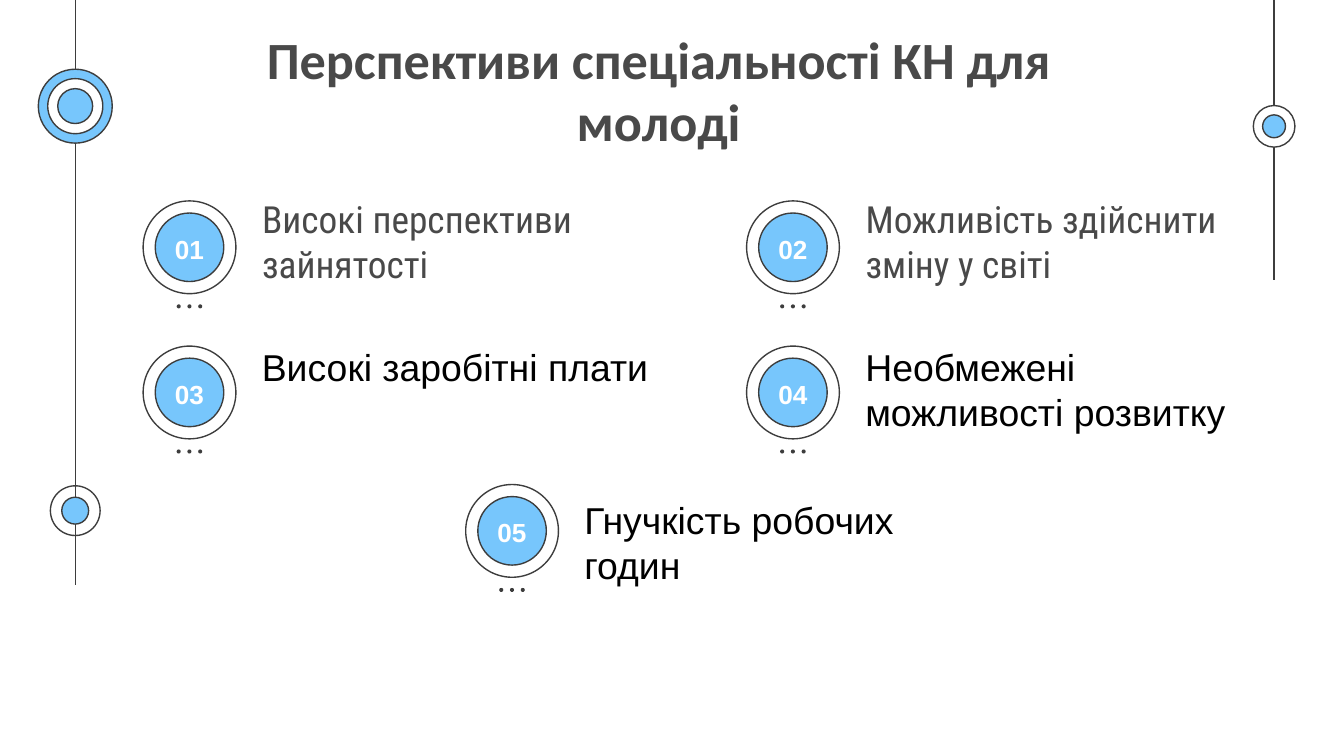
from dataclasses import dataclass
from typing import Optional

from lxml import etree
from pptx import Presentation
from pptx.dml.color import RGBColor
from pptx.enum.shapes import MSO_CONNECTOR, MSO_SHAPE
from pptx.enum.text import MSO_ANCHOR, MSO_AUTO_SIZE, PP_ALIGN
from pptx.oxml.ns import qn
from pptx.util import Inches, Pt

STRAIGHT = MSO_CONNECTOR.STRAIGHT
OVAL = MSO_SHAPE.OVAL
TOP, MIDDLE = MSO_ANCHOR.TOP, MSO_ANCHOR.MIDDLE
LEFT, CENTER = PP_ALIGN.LEFT, PP_ALIGN.CENTER
FIXED = MSO_AUTO_SIZE.NONE

WIDTH = 10
HEIGHT = WIDTH * 9 / 16
TWO_CONTENT = 3

INK = RGBColor(0x3D, 0x3D, 0x3D)
GREY = RGBColor(0x49, 0x49, 0x49)
BLUE = RGBColor(0x77, 0xC6, 0xFC)
WHITE = RGBColor(0xFF, 0xFF, 0xFF)
BLACK = RGBColor(0, 0, 0)

# Grid of badge centres
COLS = {"left": 1.41, "middle": 3.81, "right": 5.9}
ROWS = (1.84, 2.92, 3.95)
TEXT_GAP = 0.44  # from badge centre to the text frame
DOT_STEP = 0.08


@dataclass
class Item:
    text: str
    col: str
    row: int
    top: float
    width: float
    height: float
    placeholder: Optional[int] = None


@dataclass
class Ring:
    x: float
    y: float
    size: float
    fill: Optional[RGBColor]


ITEMS = (
    Item("Високі перспективи зайнятості", "left", 0, 1.36, 3.03, 0.99, 1),
    Item("Можливість здійснити зміну у світі", "right", 0, 1.36, 2.91, 1.12, 2),
    Item("Високі заробітні плати", "left", 1, 2.51, 3.66, 0.77),
    Item("Необмежені можливості розвитку", "right", 1, 2.51, 3.17, 1.11),
    Item("Гнучкість робочих годин", "middle", 2, 3.65, 3, 1.11),
)

LEFT_RAIL, RIGHT_RAIL = 0.56, 9.48
RAILS = ((LEFT_RAIL, 4.35), (RIGHT_RAIL, 2.08))
RINGS = (
    Ring(LEFT_RAIL, 3.8, 0.37, None),
    Ring(LEFT_RAIL, 3.8, 0.2, BLUE),
    Ring(RIGHT_RAIL, 0.94, 0.31, WHITE),
    Ring(RIGHT_RAIL, 0.94, 0.17, BLUE),
    Ring(LEFT_RAIL, 0.79, 0.55, BLUE),
    Ring(LEFT_RAIL, 0.79, 0.41, WHITE),
    Ring(LEFT_RAIL, 0.79, 0.26, BLUE),
)


def place(sp, left: float, top: float, width: float, height: float) -> None:
    sp.left, sp.top = Inches(left), Inches(top)
    sp.width, sp.height = Inches(width), Inches(height)


def add_rail(shapes, x: float, bottom: float) -> None:
    line = shapes.add_connector(STRAIGHT, Inches(x), 0, Inches(x), Inches(bottom))
    line.line.color.rgb = INK
    line.line.width = Pt(0.75)
    etree.SubElement(line._element.spPr, qn("a:effectLst"))


def add_circle(shapes, x: float, y: float, size: float,
               fill: Optional[RGBColor], outlined: bool = True) -> None:
    """Draw a circle around the centre x, y."""
    sp = shapes.add_shape(OVAL, Inches(x - size / 2), Inches(y - size / 2),
                          Inches(size), Inches(size))
    sp.shadow.inherit = False
    if fill is None:
        sp.fill.background()
    else:
        sp.fill.solid()
        sp.fill.fore_color.rgb = fill
    if outlined:
        sp.line.color.rgb = INK
        sp.line.width = Pt(0.75)
    else:
        sp.line.fill.background()


def write(sp, text: str, font: str, size: float, color: RGBColor,
          bold: bool = False, align=LEFT, anchor=TOP, inset: float = 0.1) -> None:
    tf = sp.text_frame
    tf.word_wrap = True
    tf.auto_size = FIXED
    tf.vertical_anchor = anchor
    tf.margin_left = tf.margin_right = Inches(0.1)
    tf.margin_top = tf.margin_bottom = Inches(inset)
    p = tf.paragraphs[0]
    p.text = text
    p.alignment = align
    p.space_before = Pt(0)
    p.font.name, p.font.size, p.font.bold = font, Pt(size), bold
    p.font.color.rgb = color


def remove_bullet(sp) -> None:
    pPr = sp.text_frame.paragraphs[0]._p.get_or_add_pPr()
    pPr.set("marL", "0")
    pPr.set("indent", "0")
    pPr.insert_element_before(etree.Element(qn("a:buNone")),
                              "a:tabLst", "a:defRPr", "a:extLst")


def add_item_text(slide, item: Item) -> None:
    box = (COLS[item.col] + TEXT_GAP, item.top, item.width, item.height)
    if item.placeholder is None:
        sp = slide.shapes.add_textbox(*map(Inches, box))
        write(sp, item.text, "Arial", 20, BLACK, inset=0.05)
    else:
        sp = slide.placeholders[item.placeholder]
        place(sp, *box)
        write(sp, item.text, "Roboto Condensed", 20, GREY)
        remove_bullet(sp)


def add_badge(slide, number: int, item: Item) -> None:
    x, y = COLS[item.col], ROWS[item.row]
    shapes = slide.shapes.add_group_shape().shapes
    add_circle(shapes, x, y, 0.69, WHITE)
    add_circle(shapes, x, y, 0.51, BLUE)
    for i in (-1, 0, 1):
        add_circle(shapes, x + i * DOT_STEP, y + 0.44, 0.03, INK, outlined=False)
    sp = slide.shapes.add_textbox(Inches(x - 0.25), Inches(y - 0.18),
                                  Inches(0.5), Inches(0.38))
    write(sp, f"{number:02d}", "Arial", 14, WHITE, bold=True,
          align=CENTER, anchor=MIDDLE)


def main() -> None:
    prs = Presentation()
    prs.slide_width, prs.slide_height = Inches(WIDTH), Inches(HEIGHT)
    slide = prs.slides.add_slide(prs.slide_layouts[TWO_CONTENT])

    # Side rails with rings
    for x, bottom in RAILS:
        add_rail(slide.shapes, x, bottom)
    for ring in RINGS:
        add_circle(slide.shapes, ring.x, ring.y, ring.size, ring.fill)

    # Title
    title = slide.shapes.title
    place(title, 1.85, 0.1, 6.1, 0.65)
    write(title, "Перспективи спеціальності КН для молоді", "Calibri", 28, GREY,
          bold=True, align=CENTER)

    # Numbered prospects
    for number, item in enumerate(ITEMS, 1):
        add_item_text(slide, item)
        add_badge(slide, number, item)

    prs.save("out.pptx")


if __name__ == "__main__":
    main()
